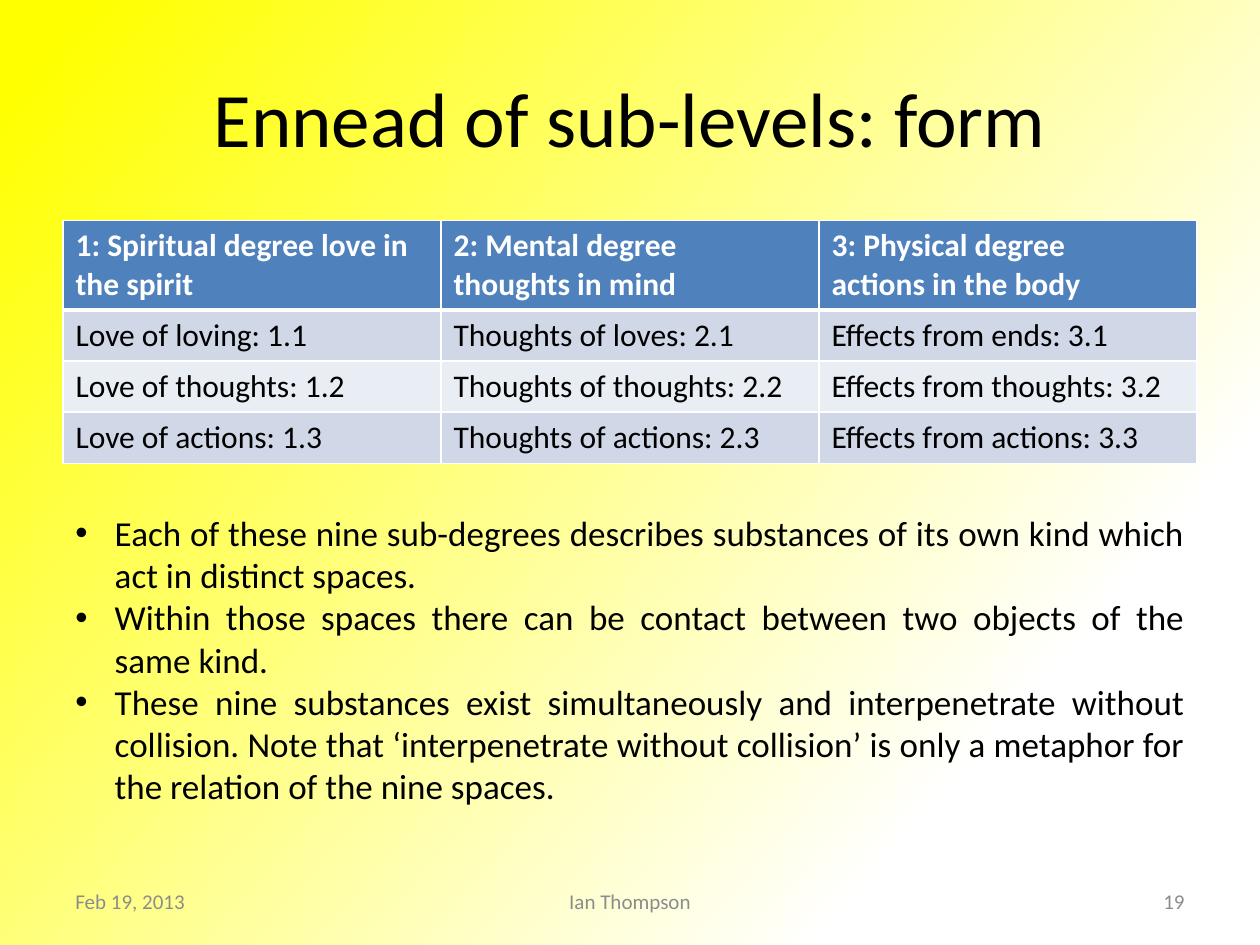
from pptx import Presentation
from pptx.dml.color import RGBColor
from pptx.enum.text import MSO_ANCHOR, MSO_AUTO_SIZE, PP_ALIGN
from pptx.oxml import parse_xml
from pptx.oxml.ns import nsdecls
from pptx.util import Pt

MARGIN = 36
CONTENT_WIDTH = 648
HEADER_HEIGHT = 51
ROW_HEIGHT = 29.2
DEGREES = [
    ["1: Spiritual degree love in the spirit",
     "2: Mental degree\nthoughts in mind",
     "3: Physical degree\nactions in the body"],
    ["Love of loving: 1.1", "Thoughts of loves: 2.1", "Effects from ends: 3.1"],
    ["Love of thoughts: 1.2", "Thoughts of thoughts: 2.2", "Effects from thoughts: 3.2"],
    ["Love of actions: 1.3", "Thoughts of actions: 2.3", "Effects from actions: 3.3"],
]
REMARKS = "\n".join([
    "Each of these nine sub-degrees describes substances of its own kind which "
    "act in distinct spaces.",
    "Within those spaces there can be contact between two objects of the same kind.",
    "These nine substances exist simultaneously and interpenetrate without collision. "
    "Note that ‘interpenetrate without collision’ is only a metaphor for the relation "
    "of the nine spaces.",
])
FOOTERS = [
    ("Feb 19, 2013", 36, 168, PP_ALIGN.LEFT),
    ("Ian Thompson", 246, 228, PP_ALIGN.CENTER),
    ("19", 516, 168, PP_ALIGN.RIGHT),
]


def color(value):
    """Turn a hex string into a colour."""
    return RGBColor.from_string(value)


def place(shape, left, top, width, height):
    """Set the position and size of a shape in points."""
    shape.left, shape.top = Pt(left), Pt(top)
    shape.width, shape.height = Pt(width), Pt(height)


def write_text(frame, text, size=18, fill="000000", bold=False,
               align=PP_ALIGN.LEFT, bullet_indent=None):
    """Write one paragraph per line of text in a single format."""
    frame.text = text
    for paragraph in frame.paragraphs:
        paragraph.alignment = align
        font = paragraph.font
        for target in [font] + [run.font for run in paragraph.runs]:
            target.name, target.size, target.bold = "Calibri", Pt(size), bold
            target.color.rgb = color(fill)
        if bullet_indent:
            add_bullet(paragraph, bullet_indent)


def add_bullet(paragraph, indent):
    """Give a paragraph a round bullet with a hanging indent."""
    properties = paragraph._p.get_or_add_pPr()
    properties.set("marL", str(Pt(indent)))
    properties.set("indent", str(-Pt(indent)))
    bullet = parse_xml(f'<a:buChar {nsdecls("a")} char="•"/>')
    font = parse_xml(f'<a:buFont {nsdecls("a")} typeface="Arial"/>')
    position = 0
    for element in (font, bullet):
        properties.insert(position, element)
        position += 1


def add_text_box(slide, text, left, top, width, height,
                 anchor=MSO_ANCHOR.TOP, grow=False, **text_format):
    """Add a wrapping text box."""
    frame = slide.shapes.add_textbox(Pt(left), Pt(top), Pt(width), Pt(height)).text_frame
    frame.word_wrap = True
    frame.vertical_anchor = anchor
    if grow:
        frame.auto_size = MSO_AUTO_SIZE.SHAPE_TO_FIT_TEXT
    write_text(frame, text, **text_format)


def set_borders(cell, **widths):
    """Draw white borders around a cell, with widths given by side."""
    properties = cell._tc.get_or_add_tcPr()
    for side in "LRTB":
        properties.append(parse_xml(
            f'<a:ln{side} {nsdecls("a")} w="{Pt(widths.get(side, 1))}">'
            '<a:solidFill><a:srgbClr val="FFFFFF"/></a:solidFill>'
            f'</a:ln{side}>'))


def add_degree_table(slide):
    """Add the table of three degrees and their sub-degrees."""
    height = HEADER_HEIGHT + ROW_HEIGHT * (len(DEGREES) - 1)
    table = slide.shapes.add_table(len(DEGREES), len(DEGREES[0]), Pt(MARGIN), Pt(126),
                                   Pt(CONTENT_WIDTH), Pt(height)).table
    for row_index, texts in enumerate(DEGREES):
        header = row_index == 0
        table.rows[row_index].height = Pt(HEADER_HEIGHT if header else ROW_HEIGHT)
        band = "D0D8E8" if row_index % 2 else "E9EDF4"
        for column_index, text in enumerate(texts):
            cell = table.cell(row_index, column_index)
            set_borders(cell, B=3 if header else 1, T=3 if row_index == 1 else 1)
            cell.fill.solid()
            cell.fill.fore_color.rgb = color("4F81BD" if header else band)
            write_text(cell.text_frame, text, bold=header,
                       fill="FFFFFF" if header else "000000")


def set_background(slide):
    """Fill the background with a slanted yellow to white gradient."""
    fill = slide.background.fill
    fill.gradient()
    fill.gradient_angle = 360 - 41
    stops = [(0.04, "FFFF00"), (0.79, "FFFFFF")]
    for stop, (position, value) in zip(fill.gradient_stops, stops):
        stop.position = position
        stop.color.rgb = color(value)


def set_title(slide, text):
    """Place and format the title."""
    title = slide.shapes.title
    place(title, MARGIN, 21.6, CONTENT_WIDTH, 90)
    title.text_frame.vertical_anchor = MSO_ANCHOR.MIDDLE
    write_text(title.text_frame, text, size=44, align=PP_ALIGN.CENTER)


def main():
    """Build the slide and save it."""
    presentation = Presentation()
    presentation.slide_width, presentation.slide_height = Pt(720), Pt(540)
    slide = presentation.slides.add_slide(presentation.slide_layouts[5])
    set_background(slide)
    set_title(slide, "Ennead of sub-levels: form")
    add_degree_table(slide)
    for text, left, width, align in FOOTERS:
        add_text_box(slide, text, left, 500.5, width, 28.75, anchor=MSO_ANCHOR.MIDDLE,
                     size=12, fill="8C8C8C", align=align)
    add_text_box(slide, REMARKS, MARGIN, 289, CONTENT_WIDTH, 201, grow=True,
                 size=20, align=PP_ALIGN.JUSTIFY, bullet_indent=22.5)
    presentation.save("out.pptx")


if __name__ == "__main__":
    main()
